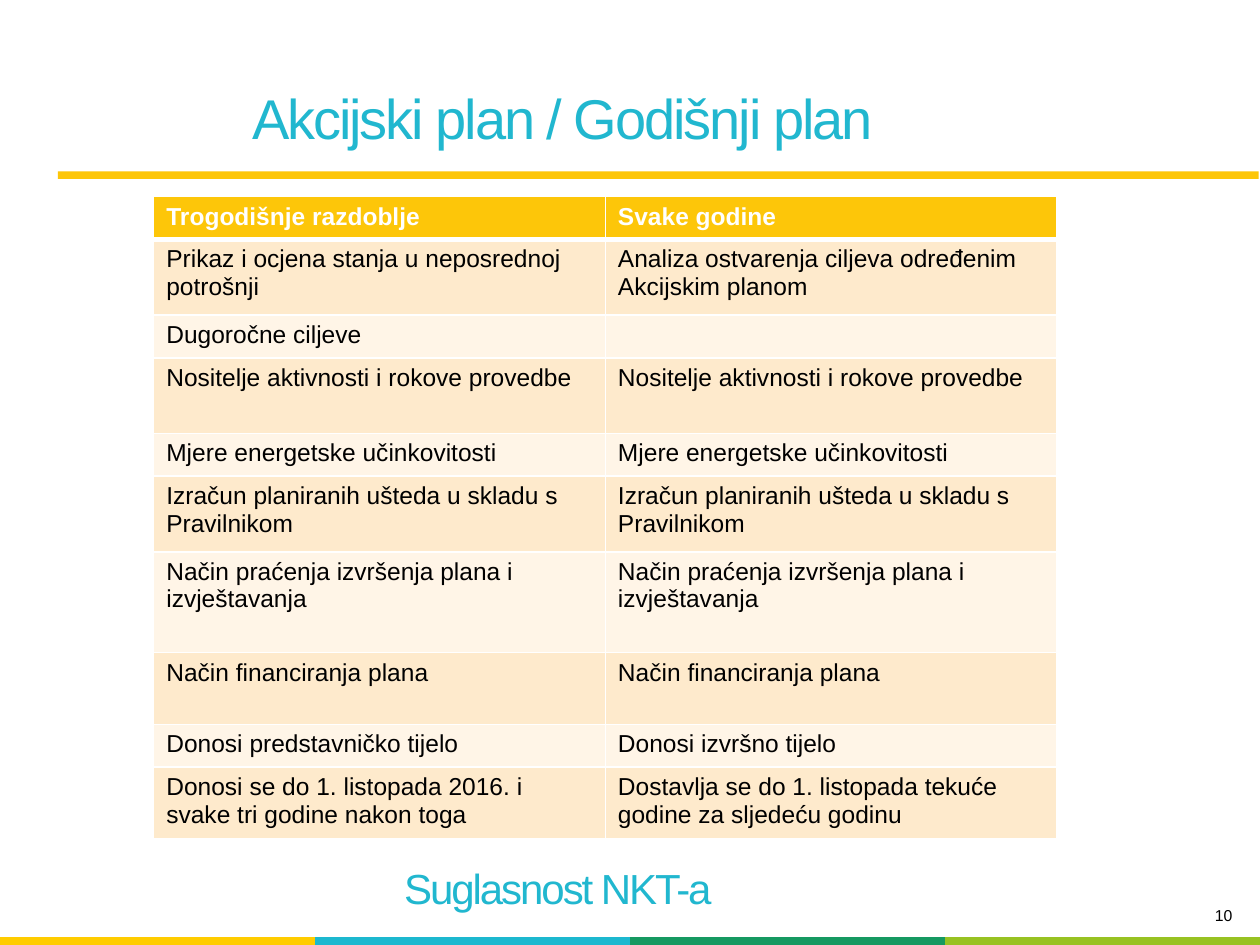
import pptx
import pptx.dml.color
import pptx.enum.shapes
import pptx.enum.text
import pptx.oxml
import pptx.oxml.ns
import pptx.util

RGBColor = pptx.dml.color.RGBColor
Inches = pptx.util.Inches
Pt = pptx.util.Pt
PP_ALIGN = pptx.enum.text.PP_ALIGN

BLACK = RGBColor(0x00, 0x00, 0x00)
WHITE = RGBColor(0xFF, 0xFF, 0xFF)
CYAN = RGBColor(0x21, 0xB7, 0xCF)
GOLD = RGBColor(0xFD, 0xC6, 0x09)
BAND_DARK = RGBColor(0xFE, 0xEA, 0xCC)
BAND_LIGHT = RGBColor(0xFF, 0xF5, 0xE7)
STRIPE = [RGBColor(0xFF, 0xCC, 0x00), RGBColor(0x1C, 0xB8, 0xCF),
          RGBColor(0x15, 0x99, 0x61), RGBColor(0x98, 0xC2, 0x22)]

WIDTH, HEIGHT = 10, 7.5
STRIPE_HEIGHT = 0.06
NO_STYLE_NO_GRID = "{2D5ABB26-0587-4C30-8999-92F81FD0307C}"

SHARED = ["Nositelje aktivnosti i rokove provedbe",
          "Mjere energetske učinkovitosti",
          "Izračun planiranih ušteda u skladu s Pravilnikom",
          "Način praćenja izvršenja plana i izvještavanja",
          "Način financiranja plana"]
PLAN_ROWS = [
    ("Trogodišnje razdoblje", "Svake godine"),
    ("Prikaz i ocjena stanja u neposrednoj potrošnji",
     "Analiza ostvarenja ciljeva određenim Akcijskim planom"),
    ("Dugoročne ciljeve", ""),
    *[(item, item) for item in SHARED],
    ("Donosi predstavničko tijelo", "Donosi izvršno tijelo"),
    ("Donosi se do 1. listopada 2016. i svake tri godine nakon toga",
     "Dostavlja se do 1. listopada tekuće godine za sljedeću godinu"),
]
ROW_HEIGHTS = [0.34, 0.6, 0.34, 0.6, 0.34, 0.6, 0.8, 0.57, 0.34, 0.57]


def write(frame, text, size, color=BLACK, bold=False, align=PP_ALIGN.LEFT, spacing=0):
    """Fill a text frame; spacing is the character spacing in points."""
    paragraph = frame.paragraphs[0]
    paragraph.alignment = align
    if not text:
        # The end mark's size keeps an empty cell from growing its row.
        paragraph._p.get_or_add_endParaRPr().set("sz", str(size * 100))
        return
    run = paragraph.add_run()
    run.text = text
    run.font.name = "Arial"
    run.font.size = Pt(size)
    run.font.bold = bold
    run.font.color.rgb = color
    if spacing:
        run.font._element.set("spc", str(round(spacing * 100)))


def add_label(slide, box, text, size, **text_format):
    label = slide.shapes.add_textbox(*map(Inches, box))
    label.text_frame.word_wrap = True
    write(label.text_frame, text, size, **text_format)


def add_title(slide, text):
    title = slide.shapes.title
    title.left, title.top, title.width, title.height = map(Inches, (0.9, 0.57, 8.83, 1.18))
    frame = title.text_frame
    frame.auto_size = pptx.enum.text.MSO_AUTO_SIZE.NONE
    frame.vertical_anchor = pptx.enum.text.MSO_ANCHOR.TOP
    frame.margin_left, frame.margin_top = Inches(1.1), Inches(0.09)
    write(frame, text, 32, color=CYAN, spacing=-1.2)


def add_rule(slide):
    rule = slide.shapes.add_shape(pptx.enum.shapes.MSO_SHAPE.RECTANGLE,
                                  *map(Inches, (0.46, 1.36, 9.53, 0.06)))
    rule.shadow.inherit = False
    rule.fill.solid()
    rule.fill.fore_color.rgb = GOLD
    rule.line.fill.background()


def add_plain_table(slide, left, top, width, row_heights, columns):
    frame = slide.shapes.add_table(len(row_heights), columns, Inches(left), Inches(top),
                                   Inches(width), Inches(sum(row_heights)))
    table = frame.table
    table.first_row = table.horz_banding = False
    style = table._tbl.tblPr.find(pptx.oxml.ns.qn("a:tableStyleId"))
    style.text = NO_STYLE_NO_GRID
    for row, height in zip(table.rows, row_heights):
        row.height = Inches(height)
    return table


def fill_cell(cell, color):
    cell.fill.solid()
    cell.fill.fore_color.rgb = color


def add_borders(cell, top=1, bottom=1):
    """Draw white cell borders; widths are in points."""
    properties = cell._tc.get_or_add_tcPr()
    for side, width in (("L", 1), ("R", 1), ("T", top), ("B", bottom)):
        properties.append(pptx.oxml.parse_xml(
            f'<a:ln{side} {pptx.oxml.ns.nsdecls("a")} w="{Pt(width)}">'
            f'<a:solidFill><a:srgbClr val="{WHITE}"/></a:solidFill></a:ln{side}>'))


def add_plan_table(slide):
    table = add_plain_table(slide, 1.22, 1.56, 7.17, ROW_HEIGHTS, 2)
    for r, texts in enumerate(PLAN_ROWS):
        header = r == 0
        band = GOLD if header else (BAND_LIGHT, BAND_DARK)[r % 2]
        for c, text in enumerate(texts):
            cell = table.cell(r, c)
            add_borders(cell, top=3 if r == 1 else 1, bottom=3 if header else 1)
            fill_cell(cell, band)
            write(cell.text_frame, text, 14, color=WHITE if header else BLACK, bold=header)


def add_footer_stripe(slide):
    table = add_plain_table(slide, 0, HEIGHT - STRIPE_HEIGHT, WIDTH,
                            [STRIPE_HEIGHT], len(STRIPE))
    for cell, color in zip(table.iter_cells(), STRIPE):
        cell.margin_top = cell.margin_bottom = 0
        fill_cell(cell, color)
        write(cell.text_frame, "", 1)


def main():
    deck = pptx.Presentation()
    deck.slide_width, deck.slide_height = Inches(WIDTH), Inches(HEIGHT)
    slide = deck.slides.add_slide(deck.slide_layouts.get_by_name("Title Only"))

    add_footer_stripe(slide)
    add_label(slide, (7.91, 7.14, 1.97, 0.3), "10", 9, align=PP_ALIGN.RIGHT)
    add_title(slide, "Akcijski plan / Godišnji plan")
    add_rule(slide)
    add_plan_table(slide)
    add_label(slide, (3.11, 6.8, 3.54, 0.5), "Suglasnost NKT-a", 24, color=CYAN, spacing=-1.2)

    deck.save("out.pptx")


if __name__ == "__main__":
    main()
